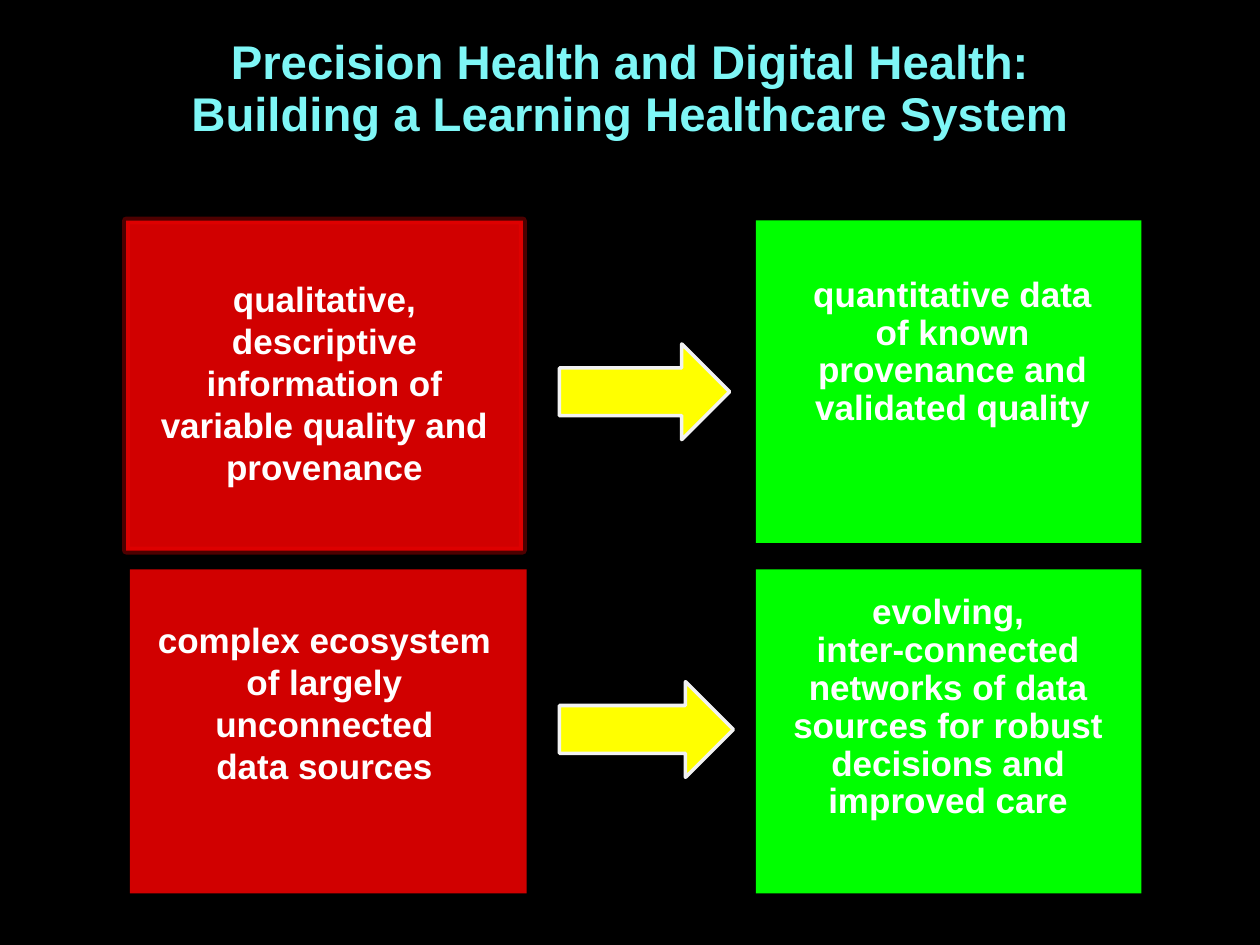
import pptx
import pptx.util
import pptx.dml.color
import pptx.enum.shapes
import pptx.enum.text
import pptx.oxml.ns
import lxml.etree

Inches = pptx.util.Inches
Pt = pptx.util.Pt
RGBColor = pptx.dml.color.RGBColor
MSO_SHAPE = pptx.enum.shapes.MSO_SHAPE

BLACK = RGBColor(0x00, 0x00, 0x00)
WHITE = RGBColor(0xFF, 0xFF, 0xFF)
RED = RGBColor(0xFF, 0x00, 0x00)
GREEN = RGBColor(0x00, 0xFF, 0x00)
YELLOW = RGBColor(0xFF, 0xFF, 0x00)
PALE_GREY = RGBColor(0xF2, 0xF2, 0xF2)
CYAN = RGBColor(0x7E, 0xF6, 0xF6)

TITLE = "Precision Health and Digital Health:\vBuilding a Learning Healthcare System"
TITLE_FONT = {"name": "Arial", "size": Pt(27), "bold": True}
BODY_FONT = {"name": "Arial", "size": Pt(20), "bold": True}
TIGHT = {"line_spacing": 0.9}
LOOSE = {"space_after": Pt(6)}

# Left, top, width, height, fill, fill opacity, outline
PANELS = [
    (1.03, 4.52, 3.15, 2.57, RED, 82, False),
    (6, 4.52, 3.06, 2.57, GREEN, 100, False),
    (6, 1.75, 3.06, 2.56, GREEN, 100, False),
    (1, 1.75, 3.15, 2.62, RED, 82, True),
]
# Left, top, width, height
ARROWS = [(4.44, 2.73, 1.35, 0.76), (4.44, 5.41, 1.38, 0.76)]
# Left, top, width, height, paragraphs, paragraph format, first-line indent
STATEMENTS = [
    (6.27, 2.15, 2.58, 1.34,
     ["quantitative data of known provenance and validated quality"], TIGHT, 0),
    (6.18, 4.67, 2.69, 1.34,
     ["evolving,\vinter-connected networks of data sources for robust "
      "decisions and\vimproved care"], TIGHT, -0.55),
    (1, 4.86, 3.15, 1.73,
     ["complex ecosystem of largely unconnected", "data sources"], {}, 0),
    (1, 2.15, 3.15, 1.73,
     ["qualitative, descriptive information of variable quality and provenance"],
     LOOSE, 0),
]


def set_attributes(target, values):
    for name, value in values.items():
        setattr(target, name, value)


def set_opacity(color_format_owner, percent):
    """Add an alpha value to the solid colour inside a fill or line element."""
    color = color_format_owner.find(".//" + pptx.oxml.ns.qn("a:srgbClr"))
    alpha = lxml.etree.SubElement(color, pptx.oxml.ns.qn("a:alpha"))
    alpha.set("val", str(percent * 1000))


def add_filled_shape(slide, kind, box, fill):
    sp = slide.shapes.add_shape(kind, *map(Inches, box))
    sp.shadow.inherit = False
    sp.fill.solid()
    sp.fill.fore_color.rgb = fill
    sp.line.fill.background()
    return sp


def add_panel(slide, *box, fill, opacity, outlined):
    sp = add_filled_shape(slide, MSO_SHAPE.RECTANGLE, box, fill)
    if opacity < 100:
        set_opacity(sp.element.spPr.find(pptx.oxml.ns.qn("a:solidFill")), opacity)
    if outlined:
        sp.line.color.rgb = fill
        sp.line.width = Pt(4.5)
        set_opacity(sp.element.spPr.find(pptx.oxml.ns.qn("a:ln")), 30)


def add_arrow(slide, box):
    sp = add_filled_shape(slide, MSO_SHAPE.RIGHT_ARROW, box, YELLOW)
    sp.line.color.rgb = PALE_GREY
    sp.line.width = Pt(2)


def format_paragraph(p, font, color, values):
    p.alignment = pptx.enum.text.PP_ALIGN.CENTER
    set_attributes(p, values)
    for r in p.runs:
        set_attributes(r.font, font)
        r.font.color.rgb = color


def add_statement(slide, *box, paragraphs, values, indent):
    sp = slide.shapes.add_textbox(*map(Inches, box))
    tf = sp.text_frame
    tf.word_wrap = True
    tf.text = "\n".join(paragraphs)
    for p in tf.paragraphs:
        format_paragraph(p, BODY_FONT, WHITE, values)
        if indent:
            p._p.get_or_add_pPr().set("indent", str(Inches(indent)))


def format_title(slide):
    sp = slide.shapes.title
    set_attributes(sp, {"left": Inches(0.43), "top": Inches(0.31),
                        "width": Inches(9.14), "height": Inches(0.49)})
    tf = sp.text_frame
    set_attributes(tf, {"margin_left": 0, "margin_top": 0, "margin_right": 0,
                        "margin_bottom": 0, "word_wrap": True,
                        "auto_size": pptx.enum.text.MSO_AUTO_SIZE.NONE,
                        "vertical_anchor": pptx.enum.text.MSO_ANCHOR.TOP})
    tf.text = TITLE
    format_paragraph(tf.paragraphs[0], TITLE_FONT, CYAN, TIGHT)


def main():
    prs = pptx.Presentation()
    prs.slide_width, prs.slide_height = Inches(10), Inches(7.5)
    slide = prs.slides.add_slide(prs.slide_layouts[5])
    slide.background.fill.solid()
    slide.background.fill.fore_color.rgb = BLACK

    format_title(slide)
    for *box, fill, opacity, outlined in PANELS:
        add_panel(slide, *box, fill=fill, opacity=opacity, outlined=outlined)
    for box in ARROWS:
        add_arrow(slide, box)
    for *box, paragraphs, values, indent in STATEMENTS:
        add_statement(slide, *box, paragraphs=paragraphs, values=values, indent=indent)
    prs.save("out.pptx")


if __name__ == "__main__":
    main()
